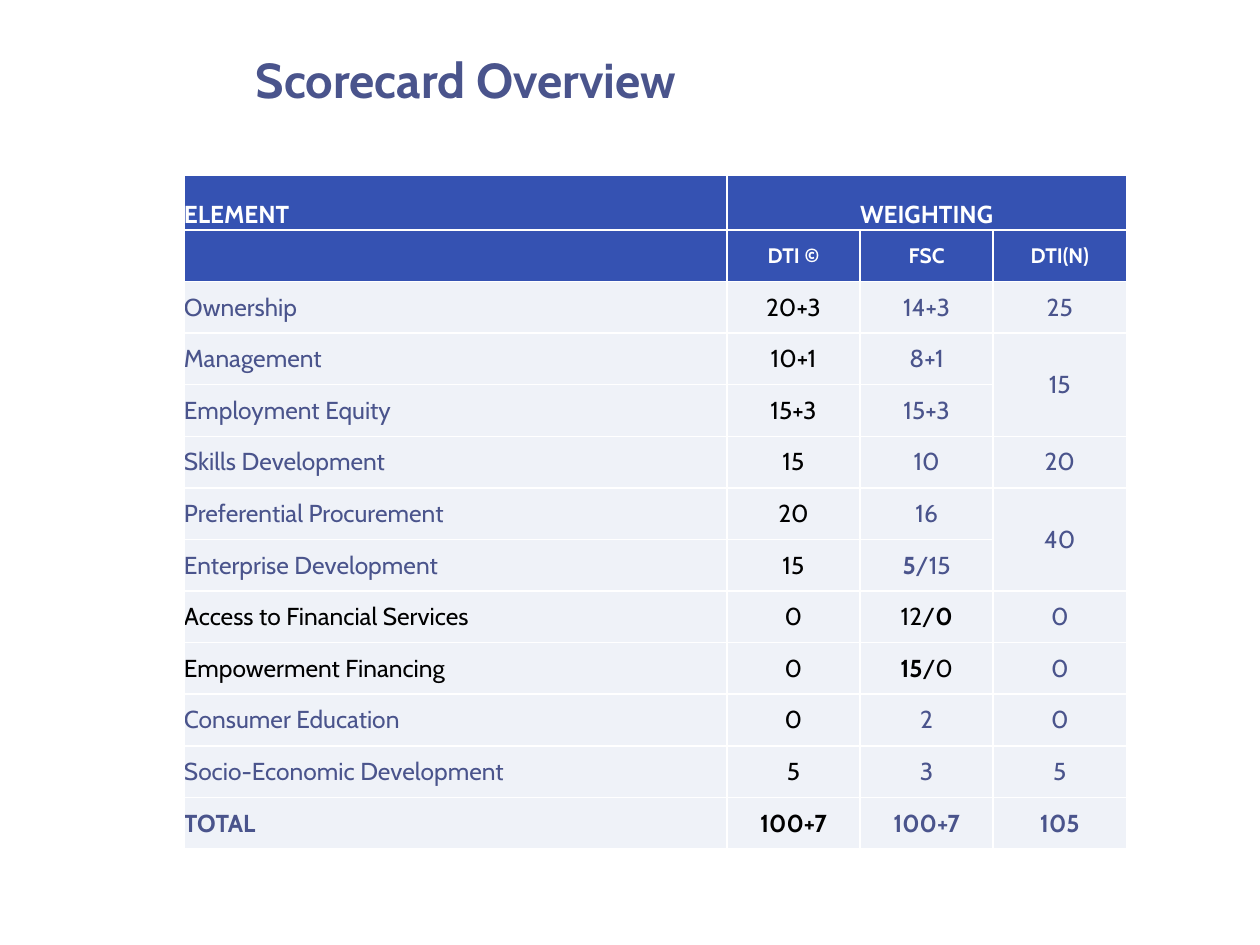
from lxml.etree import SubElement
from pptx import Presentation
from pptx.dml.color import RGBColor
from pptx.enum.text import MSO_ANCHOR as Anchor, PP_ALIGN as Align
from pptx.oxml.ns import qn
from pptx.util import Pt

# Content: "**" surrounds bold text, None continues a merged cell
TITLE = "Scorecard Overview"
ROWS = [
    ("**ELEMENT**", "**WEIGHTING**", None, None),
    ("", "**DTI ©**", "**FSC**", "**DTI(N)**"),
    ("Ownership", "20+3", "14+3", "25"),
    ("Management", "10+1", "8+1", "15"),
    ("Employment Equity", "15+3", "15+3", None),
    ("Skills Development", "15", "10", "20"),
    ("Preferential Procurement", "20", "16", "40"),
    ("Enterprise Development", "15", "**5**/15", None),
    ("Access to Financial Services", "0", "12/**0**", "0"),
    ("Empowerment Financing", "0", "**15**/0", "0"),
    ("Consumer Education", "0", "2", "0"),
    ("Socio-Economic Development", "5", "3", "5"),
    ("**TOTAL**", "**100+7**", "**100+7**", "**105**"),
]
MERGES = [((0, 1), (0, 3)), ((3, 3), (4, 3)), ((6, 3), (7, 3))]
HEADER_ROWS = 2
FSC_ONLY = ("Access to Financial Services", "Empowerment Financing")

# Style
FONT = "Cabin"
WHITE = RGBColor(0xFF, 0xFF, 0xFF)
BLACK = RGBColor(0, 0, 0)
INDIGO = RGBColor(0x4A, 0x54, 0x8C)
BLUE = RGBColor(0x35, 0x52, 0xB2)
PALE = RGBColor(0xEF, 0xF2, 0xF8)
COLUMN_WIDTHS = [310.3, 76.1, 76.1, 76.1]
ROW_HEIGHTS = [31] + [29.5] * (len(ROWS) - 1)


def style_font(font, size, color, bold):
    font.name, font.size, font.bold = FONT, Pt(size), bold
    font.color.rgb = color


def add_borders(cell):
    properties = cell._tc.get_or_add_tcPr()
    for side in ("a:lnL", "a:lnR", "a:lnT", "a:lnB"):
        line = SubElement(properties, qn(side), w=str(Pt(1)))
        fill = SubElement(line, qn("a:solidFill"))
        SubElement(fill, qn("a:srgbClr"), val=str(WHITE))


def text_color(row, column):
    if row < HEADER_ROWS:
        return WHITE
    if column == 1 or (ROWS[row][0] in FSC_ONLY and column < 3):
        return BLACK
    return INDIGO


def fill_cell(cell, row, column):
    add_borders(cell)
    cell.fill.solid()
    cell.fill.fore_color.rgb = BLUE if row < HEADER_ROWS else PALE
    cell.margin_left = cell.margin_right = cell.margin_top = cell.margin_bottom = 0
    cell.vertical_anchor = Anchor.BOTTOM if row == 0 else Anchor.MIDDLE
    paragraph = cell.text_frame.paragraphs[0]
    paragraph.alignment = Align.CENTER if column else Align.LEFT
    size = 12 if row == 1 else 14
    for index, part in enumerate((ROWS[row][column] or "").split("**")):
        if part:
            run = paragraph.add_run()
            run.text = part
            style_font(run.font, size, text_color(row, column), index % 2 == 1)


presentation = Presentation()
presentation.slide_width, presentation.slide_height = Pt(720), Pt(540)
slide = presentation.slides.add_slide(presentation.slide_layouts[5])

# Title
title = slide.shapes.title
title.left, title.top, title.width, title.height = Pt(139), Pt(5.8), Pt(545), Pt(78.5)
title.text_frame.text = TITLE
title.text_frame.vertical_anchor = Anchor.MIDDLE
paragraph = title.text_frame.paragraphs[0]
paragraph.alignment = Align.LEFT
style_font(paragraph.runs[0].font, 28, INDIGO, True)

# Scorecard table
table = slide.shapes.add_table(
    len(ROWS), len(COLUMN_WIDTHS), Pt(105.1), Pt(100.4),
    Pt(sum(COLUMN_WIDTHS)), Pt(sum(ROW_HEIGHTS))).table
for column, width in zip(table.columns, COLUMN_WIDTHS):
    column.width = Pt(width)
for row, height in zip(table.rows, ROW_HEIGHTS):
    row.height = Pt(height)
for first, last in MERGES:
    table.cell(*first).merge(table.cell(*last))
for row in range(len(ROWS)):
    for column in range(len(COLUMN_WIDTHS)):
        fill_cell(table.cell(row, column), row, column)

presentation.save("out.pptx")
